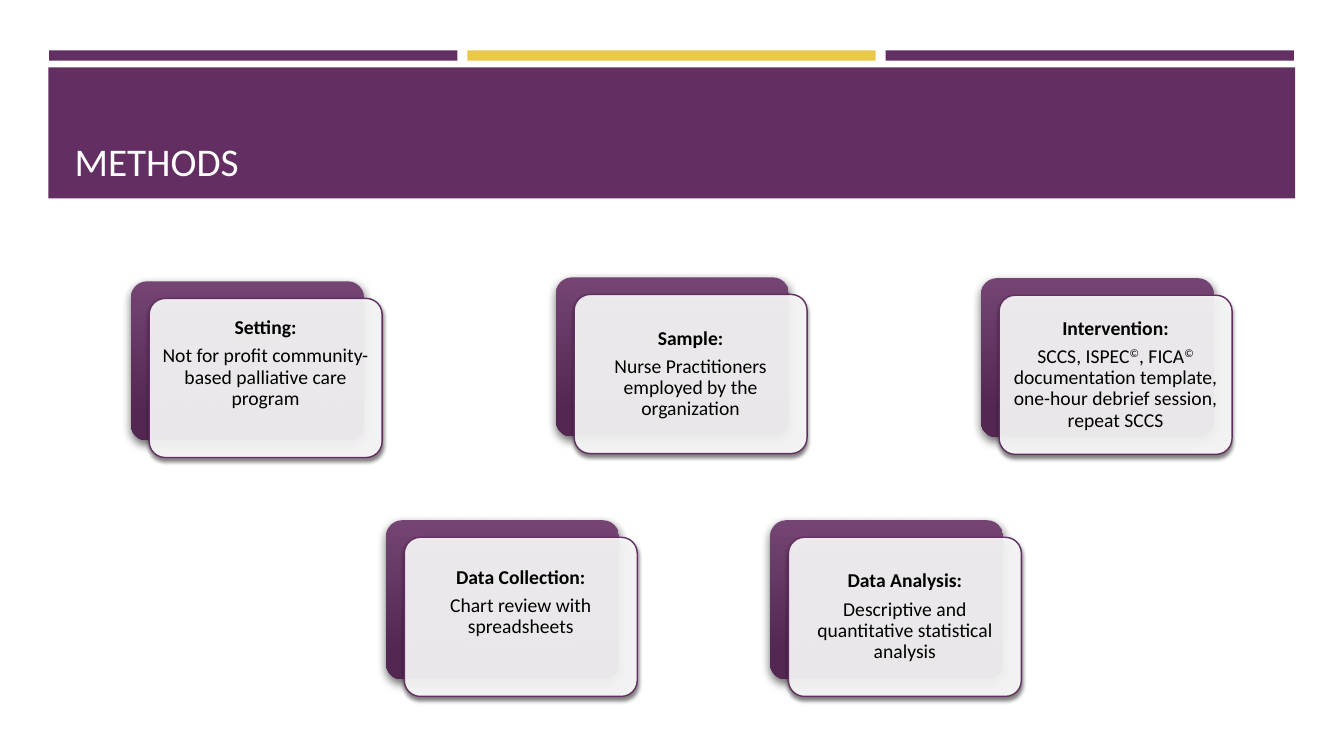
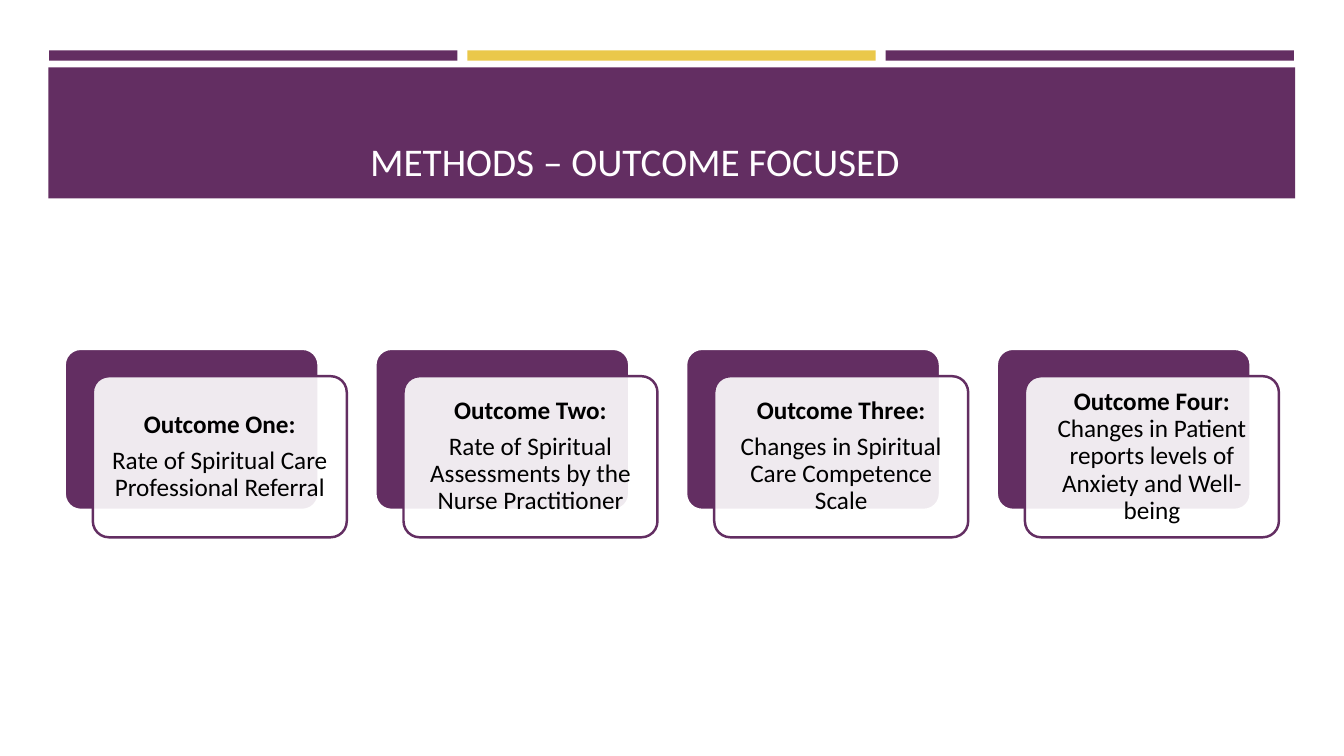
from dataclasses import dataclass

from lxml.etree import SubElement
from pptx import Presentation
from pptx.dml.color import RGBColor
from pptx.enum.shapes import MSO_SHAPE
from pptx.enum.text import MSO_ANCHOR, PP_ALIGN
from pptx.oxml.ns import qn
from pptx.util import Cm, Pt


@dataclass(frozen=True)
class Theme:
    font: str = "Calibri"
    purple: str = "632E62"
    purple_light: str = "744573"
    purple_dark: str = "532752"
    gold: str = "EAC84A"
    white: str = "FFFFFF"
    title_color: str = "FFFEFF"
    black: str = "000000"
    title_size: int = 28
    method_size: int = 14
    outcome_size: int = 18


@dataclass(frozen=True)
class CardStyle:
    """Lengths in cm, type and lines in points; shift is front against back."""
    width: float
    height: float
    shift: tuple
    inset: float
    text_size: int
    line_width: float
    raised: bool  # gradient back with shadows, instead of a flat one


@dataclass(frozen=True)
class Shadow:
    opacity: int
    blur: float
    distance: float
    angle: int


THEME = Theme()
BACK_SHADOW = Shadow(opacity=60, blur=7, distance=3, angle=84)
FRONT_SHADOW = Shadow(opacity=55, blur=3, distance=2, angle=90)
METHOD_CARD = CardStyle(5.87, 4.01, (0.46, 0.43), 0.15, THEME.method_size, 1, True)
OUTCOME_CARD = CardStyle(6.4, 4.06, (0.71, 0.69), 0.18, THEME.outcome_size, 1.75, False)
LIFT = 0.72  # room left free under the text of a card whose text sits higher

# A card's text is a list of paragraphs, each a list of (text, style) runs.
SETTING = [[("Setting:", "bold")],
           [("Not for profit community-based palliative care program", "")]]
SAMPLE = [[("Sample:", "bold")],
          [("Nurse Practitioners employed by the organization", "")]]
INTERVENTION = [[("Intervention:", "bold")],
                [("SCCS, ISPEC", ""), ("©", "super"), (", FICA", ""), ("©", "super"),
                 (" documentation template, one-hour debrief session, repeat SCCS", "")]]
DATA_COLLECTION = [[("Data Collection:", "bold")],
                   [("Chart review with spreadsheets", "")]]
DATA_ANALYSIS = [[("Data Analysis:", "bold")],
                 [("Descriptive and quantitative statistical analysis", "")]]
OUTCOMES = [
    [[("Outcome One:", "bold")],
     [("Rate of Spiritual Care Professional Referral", "")]],
    [[("Outcome Two:", "bold")],
     [("Rate of Spiritual Assessments by the Nurse Practitioner", "")]],
    [[("Outcome Three:", "bold")],
     [("Changes in Spiritual Care Competence Scale", "")]],
    [[("Outcome Four: ", "bold"),
      ("Changes in Patient reports levels of Anxiety and Well-being", "")]],
]


def rgb(color):
    return RGBColor.from_string(color)


def add_block(slide, left, top, width, height, color, kind=MSO_SHAPE.RECTANGLE):
    """Add a plain filled shape, without line or shadow; lengths in cm."""
    block = slide.shapes.add_shape(kind, Cm(left), Cm(top), Cm(width), Cm(height))
    block.shadow.inherit = False
    block.fill.solid()
    block.fill.fore_color.rgb = rgb(color)
    block.line.fill.background()
    return block


def write(shape, paragraphs, *, size, color, align, anchor, insets,
          line_spacing=1.0, space_after=0):
    """Fill a shape with text; insets are left, top, right, bottom in cm."""
    frame = shape.text_frame
    frame.word_wrap = True
    frame.vertical_anchor = anchor
    (frame.margin_left, frame.margin_top,
     frame.margin_right, frame.margin_bottom) = map(Cm, insets)
    for index, runs in enumerate(paragraphs):
        paragraph = frame.add_paragraph() if index else frame.paragraphs[0]
        paragraph.alignment = align
        paragraph.line_spacing = line_spacing
        paragraph.space_after = Pt(space_after)
        for text, style in runs:
            run = paragraph.add_run()
            run.text = text
            run.font.name = THEME.font
            run.font.size = Pt(size)
            run.font.color.rgb = rgb(color)
            run.font.bold = style == "bold"
            if style == "super":
                run._r.get_or_add_rPr().set("baseline", "30000")


def set_line(shape, color, width):
    shape.line.color.rgb = rgb(color)
    shape.line.width = Pt(width)


def set_opacity(shape, percent):
    color = shape._element.spPr.find(qn("a:solidFill"))[0]
    SubElement(color, qn("a:alpha"), val=str(percent * 1000))


def cast_shadow(shape, shadow):
    effects = shape._element.spPr.find(qn("a:effectLst"))
    outer = SubElement(effects, qn("a:outerShdw"), blurRad=str(Pt(shadow.blur)),
                       dist=str(Pt(shadow.distance)), dir=str(shadow.angle * 60000),
                       algn="ctr", rotWithShape="0")
    color = SubElement(outer, qn("a:srgbClr"), val=THEME.black)
    SubElement(color, qn("a:alpha"), val=str(shadow.opacity * 1000))


def shade(shape):
    """Shade from light purple at the top to dark purple near the bottom."""
    shape.fill.gradient()
    shape.fill.gradient_angle = 270
    shades = ((0, THEME.purple_light), (0.84, THEME.purple_dark))
    for stop, (position, color) in zip(shape.fill.gradient_stops, shades):
        stop.position = position
        stop.color.rgb = rgb(color)


def add_header(slide, title, align=PP_ALIGN.LEFT, right_inset=0.66):
    for column, color in enumerate((THEME.purple, THEME.gold, THEME.purple)):
        add_block(slide, 1.24 + column * 10.54, 1.27, 10.29, 0.26, color)
    banner = add_block(slide, 1.22, 1.7, 31.42, 3.3, THEME.purple)
    write(banner, [[(title, "")]], size=THEME.title_size, color=THEME.title_color,
          align=align, anchor=MSO_ANCHOR.BOTTOM, insets=(0.66, 0.36, right_inset, 0.36))


def add_card(slide, left, top, paragraphs, style, lift=0):
    """Add a purple back panel and, shifted over it, the panel with the text."""
    right, down = style.shift
    back, front = (
        add_block(slide, x, y, style.width, style.height, color,
                  MSO_SHAPE.ROUNDED_RECTANGLE)
        for x, y, color in ((left, top, THEME.purple),
                            (left + right, top + down, THEME.white)))
    for panel in (back, front):
        panel.adjustments[0] = 0.1
    set_opacity(front, 90)
    set_line(front, THEME.purple, style.line_width)
    if style.raised:
        shade(back)
        cast_shadow(back, BACK_SHADOW)
        cast_shadow(front, FRONT_SHADOW)
    else:
        set_line(back, THEME.white, style.line_width)
    inset = style.inset
    write(front, paragraphs, size=style.text_size, color=THEME.black,
          align=PP_ALIGN.CENTER, anchor=MSO_ANCHOR.MIDDLE,
          insets=(inset, inset, inset, inset + lift),
          line_spacing=0.9, space_after=round(0.35 * style.text_size))


def add_methods_slide(slide):
    add_header(slide, "METHODS")
    upper_row = ((SETTING, 7.09, LIFT), (SAMPLE, 6.99, 0), (INTERVENTION, 7.01, 0))
    for column, (text, top, lift) in enumerate(upper_row):
        add_card(slide, 3.3 + column * 10.71, top, text, METHOD_CARD, lift)
    lower_row = ((DATA_COLLECTION, LIFT), (DATA_ANALYSIS, 0))
    for column, (text, lift) in enumerate(lower_row):
        add_card(slide, 9.73 + column * 9.68, 13.11, text, METHOD_CARD, lift)


def add_outcomes_slide(slide):
    add_header(slide, "METHODS – OUTCOME FOCUSED", PP_ALIGN.CENTER, right_inset=2.53)
    for column, text in enumerate(OUTCOMES):
        add_card(slide, 1.63 + column * 7.83, 8.79, text, OUTCOME_CARD)


def main():
    deck = Presentation()
    deck.slide_width, deck.slide_height = Cm(33.87), Cm(19.05)
    blank = deck.slide_layouts[6]
    for fill_slide in (add_methods_slide, add_outcomes_slide):
        fill_slide(deck.slides.add_slide(blank))
    deck.save("out.pptx")


if __name__ == "__main__":
    main()
